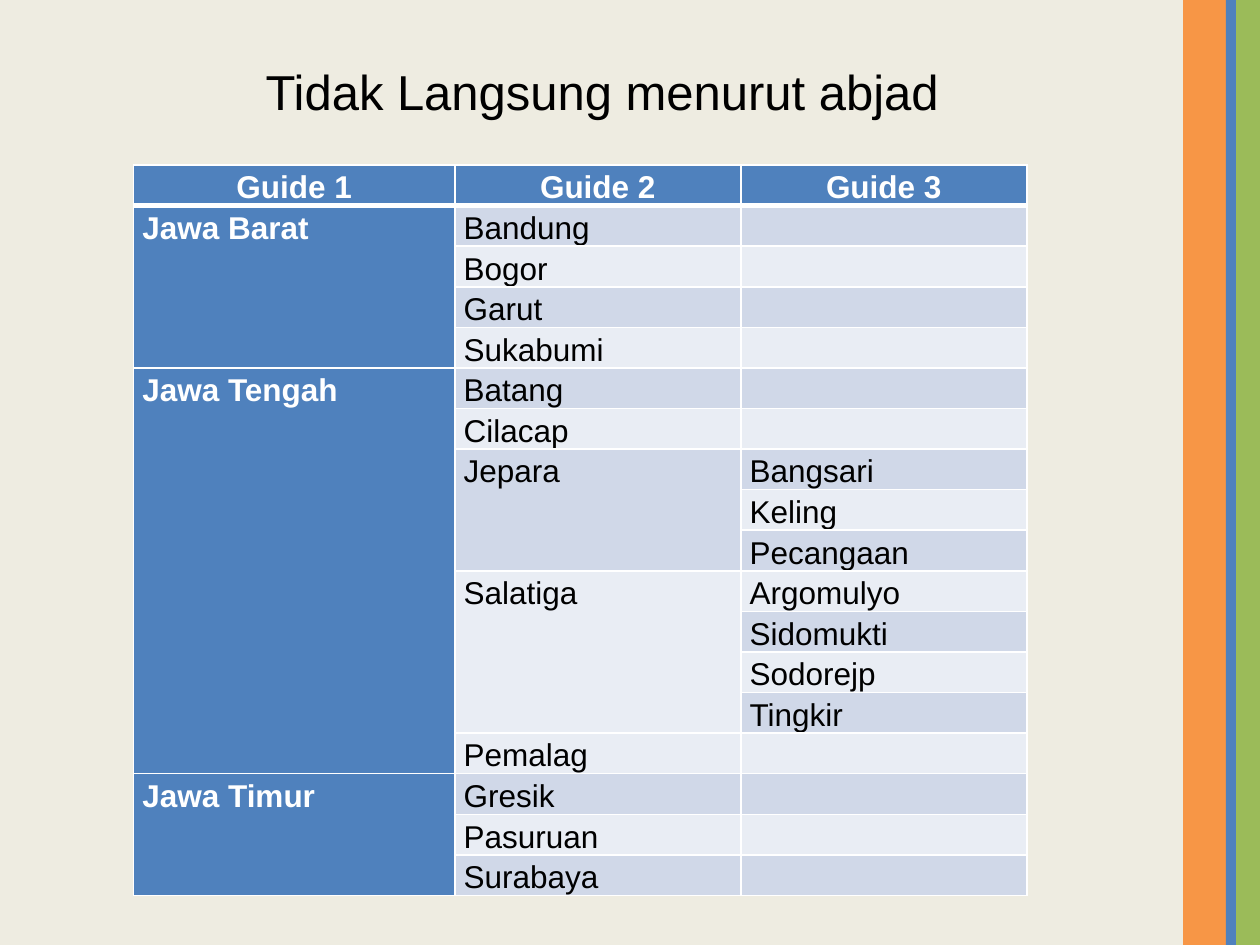
from lxml import etree
from pptx import Presentation
from pptx.dml.color import RGBColor
from pptx.enum.shapes import MSO_SHAPE
from pptx.enum.text import MSO_AUTO_SIZE, PP_ALIGN
from pptx.oxml.ns import qn
from pptx.util import Inches, Pt

RECTANGLE = MSO_SHAPE.RECTANGLE
FIT_SHAPE = MSO_AUTO_SIZE.SHAPE_TO_FIT_TEXT
LEFT, CENTER, JUSTIFY = PP_ALIGN.LEFT, PP_ALIGN.CENTER, PP_ALIGN.JUSTIFY

COLORS = {
    "background": "EEECE1", "orange": "F79646", "green": "9BBB59",
    "blue": "4F81BD", "dark_band": "D0D8E8", "light_band": "E9EDF4",
    "white": "FFFFFF", "black": "000000",
}

HEADERS = ["Guide 1", "Guide 2", "Guide 3"]
# Province -> town -> districts
REGIONS = {
    "Jawa Barat": {"Bandung": [], "Bogor": [], "Garut": [], "Sukabumi": []},
    "Jawa Tengah": {
        "Batang": [], "Cilacap": [],
        "Jepara": ["Bangsari", "Keling", "Pecangaan"],
        "Salatiga": ["Argomulyo", "Sidomukti", "Sodorejp", "Tingkir"],
        "Pemalag": [],
    },
    "Jawa Timur": {"Gresik": [], "Pasuruan": [], "Surabaya": []},
}


def color(name):
    return RGBColor.from_string(COLORS[name])


def write_text(frame, text, size=18, ink="black", bold=False, align=LEFT,
               spacing=None):
    paragraph = frame.paragraphs[0]
    paragraph.alignment = align
    paragraph.line_spacing = spacing
    if not text:
        # The end mark sets the line height of an empty cell
        paragraph._p.get_or_add_endParaRPr().set("sz", str(size * 100))
        return
    run = paragraph.add_run()
    run.text = text
    run.font.name = "Arial"
    run.font.size = Pt(size)
    run.font.bold = bold
    run.font.color.rgb = color(ink)


class SlideBuilder:
    def __init__(self, slide):
        self.slide = slide
        slide.background.fill.solid()
        slide.background.fill.fore_color.rgb = color("background")

    def bar(self, left, width, fill):
        bar = self.slide.shapes.add_shape(
            RECTANGLE, Inches(left), 0, Inches(width), Inches(7.5))
        bar.shadow.inherit = False
        bar.fill.solid()
        bar.fill.fore_color.rgb = color(fill)
        bar.line.fill.background()

    def title(self, text, left, top, width, height):
        box = self.slide.shapes.add_textbox(
            Inches(left), Inches(top), Inches(width), Inches(height))
        box.text_frame.word_wrap = False
        box.text_frame.auto_size = FIT_SHAPE
        write_text(box.text_frame, text, size=28)

    def table(self, left, top, widths, row_height, row_count):
        frame = self.slide.shapes.add_table(
            row_count, len(widths), Inches(left), Inches(top),
            Inches(sum(widths)), Inches(row_height * row_count))
        table = frame.table
        for column, width in zip(table.columns, widths):
            column.width = Inches(width)
        for row in table.rows:
            row.height = Inches(row_height)
        return table

    def cell(self, cell, text, fill, top=1, bottom=1, **style):
        cell.margin_left = cell.margin_right = Inches(0.07)
        cell.margin_top = cell.margin_bottom = 0
        write_text(cell.text_frame, text, spacing=1.15, **style)
        self.borders(cell, top, bottom)
        cell.fill.solid()
        cell.fill.fore_color.rgb = color(fill)

    def borders(self, cell, top, bottom):
        properties = cell._tc.get_or_add_tcPr()
        sides = {"lnL": 1, "lnR": 1, "lnT": top, "lnB": bottom}
        for side, points in sides.items():
            line = etree.SubElement(
                properties, qn(f"a:{side}"), w=str(Pt(points)))
            solid = etree.SubElement(line, qn("a:solidFill"))
            etree.SubElement(solid, qn("a:srgbClr"), val=COLORS["white"])


def region_rows():
    """Give each row's texts; a name stands only in the first of its rows."""
    rows = []
    for province, towns in REGIONS.items():
        province_name = province
        for town, districts in towns.items():
            for i, district in enumerate(districts or [""]):
                rows.append((province_name, "" if i else town, district))
                province_name = ""
    return rows


def build_guide_table(builder):
    rows = region_rows()
    guide = builder.table(1.06, 1.31, [2.55, 2.27, 2.27], 0.32, len(rows) + 1)

    # Header
    for c, header in enumerate(HEADERS):
        builder.cell(guide.cell(0, c), header, "blue", bottom=3,
                     ink="white", bold=True, align=CENTER)

    # Banded body with blue provinces
    for r, texts in enumerate(rows, start=1):
        band = "dark_band" if r % 2 else "light_band"
        top = 3 if r == 1 else 1
        for c, text in enumerate(texts):
            if c == 0:
                align = JUSTIFY if text == "Jawa Timur" else LEFT
                builder.cell(guide.cell(r, c), text, "blue", top=top,
                             ink="white", bold=True, align=align)
            else:
                builder.cell(guide.cell(r, c), text, band, top=top)

    # Merge each name over the rows it covers
    for c in (0, 1):
        starts = [r for r, texts in enumerate(rows, start=1) if texts[c]]
        for start, following in zip(starts, starts[1:] + [len(rows) + 1]):
            if following - start > 1:
                guide.cell(start, c).merge(guide.cell(following - 1, c))


def main():
    deck = Presentation()
    deck.slide_width, deck.slide_height = Inches(10), Inches(7.5)
    builder = SlideBuilder(deck.slides.add_slide(deck.slide_layouts[6]))

    # Side stripes
    builder.bar(9.39, 0.35, "orange")
    builder.bar(9.81, 0.19, "green")
    builder.bar(9.73, 0.08, "blue")

    build_guide_table(builder)
    builder.title("Tidak Langsung menurut abjad", 2.01, 0.44, 5.65, 0.57)
    deck.save("out.pptx")


if __name__ == "__main__":
    main()
